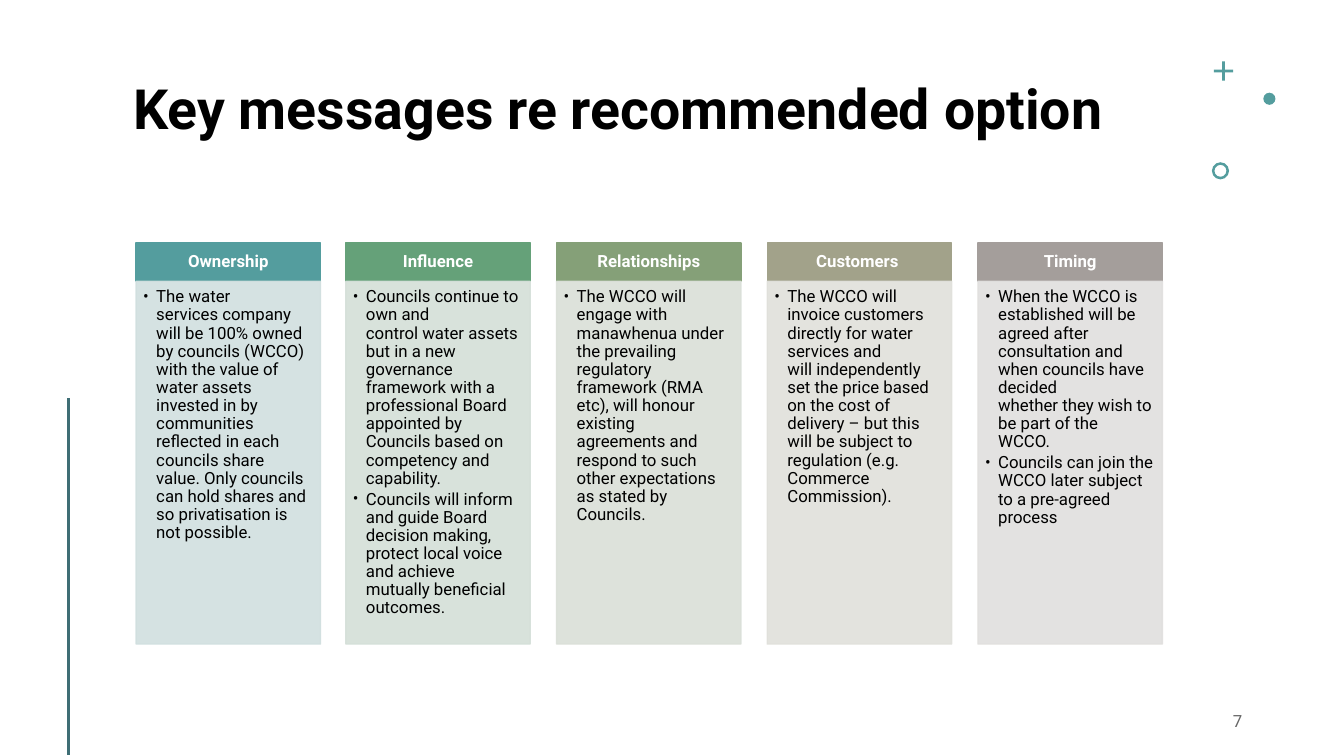
"""Build the slide of key messages about the recommended option."""
from lxml.etree import SubElement
from pptx import Presentation
from pptx.dml.color import RGBColor
from pptx.enum.shapes import MSO_CONNECTOR as Connector, MSO_SHAPE as Preset
from pptx.enum.text import MSO_ANCHOR as Anchor, MSO_AUTO_SIZE as AutoSize, PP_ALIGN as Align
from pptx.oxml.ns import qn
from pptx.util import Emu, Pt

PX = 9144
FONT = "Roboto"
TEAL = "549D9E"
DARK_TEAL = "3F6E75"
BLACK = "000000"
TIE = "~"
HARD_SPACE = chr(160)
COLUMNS = [
    ("Ownership", TEAL, "D1DFDF", [
        "The water services~company will be 100% owned by councils (WCCO) with the value of "
        "water assets invested in by communities reflected in each councils share value. "
        "Only councils can hold shares and so privatisation is not possible."]),
    ("Influence", "65A179", "D4DFD8", [
        "Councils continue to own and control~water assets but in a new governance framework "
        "with a professional Board appointed by Councils based on competency and capability.",
        "Councils will inform and guide Board decision making, protect local voice and "
        "achieve mutually beneficial outcomes."]),
    ("Relationships", "85A078", "DADFD8", [
        "The WCCO will engage with manawhenua under the prevailing regulatory framework "
        "(RMA etc), will honour existing agreements~and respond to such other expectations "
        "as stated by Councils."]),
    ("Customers ", "A2A28A", "E0E0DB", [
        "The WCCO will invoice customers directly for water services and will~independently "
        "set the price based on the cost of delivery – but this will be subject to "
        "regulation (e.g. Commerce Commission)."]),
    ("Timing", "A49E9B", "E0DFDE", [
        "When the WCCO is established will be agreed after consultation~and when councils "
        "have decided whether~they wish to be part of the WCCO.",
        "Councils can join the WCCO~later subject to a pre-agreed process"]),
]


def px(*lengths):
    """Turn whole pixels into a list of EMU lengths."""
    return [Emu(length * PX) for length in lengths]


def rgb(code):
    """Turn a hex string into a colour."""
    return RGBColor.from_string(code)


def fade(shape, percent):
    """Give every colour of a shape the same opacity."""
    for color in shape.element.iter(qn("a:srgbClr")):
        SubElement(color, qn("a:alpha")).set("val", str(percent * 1000))


def set_frame(box, anchor, insets):
    """Set wrapping, anchor and insets of a text frame and return it."""
    frame = box.text_frame
    frame.word_wrap = True
    frame.auto_size = AutoSize.NONE
    frame.vertical_anchor = anchor
    (frame.margin_left, frame.margin_top,
     frame.margin_right, frame.margin_bottom) = px(*insets)
    return frame


def add_span(para, text, size, color, bold=False):
    """Add one formatted run to a paragraph, with ties as hard spaces."""
    span = para.add_run()
    span.text = text.replace(TIE, HARD_SPACE)
    span.font.name = FONT
    span.font.size = Pt(size)
    span.font.bold = bold
    span.font.color.rgb = rgb(color)


def add_preset(page, preset, place, color, outlined=False):
    """Add a filled preset shape without shadow."""
    shape = page.shapes.add_shape(preset, *px(*place))
    shape.shadow.inherit = False
    shape.fill.solid()
    shape.fill.fore_color.rgb = rgb(color)
    if outlined:
        shape.line.color.rgb = rgb(color)
        shape.line.width = Pt(1)
    else:
        shape.line.fill.background()
    return shape


def add_bullet(para):
    """Give a paragraph a hanging bullet."""
    props = para._p.get_or_add_pPr()
    indent = px(13)[0]
    props.set("marL", str(indent))
    props.set("indent", str(-indent))
    SubElement(props, qn("a:buFont")).set("typeface", FONT)
    SubElement(props, qn("a:buChar")).set("char", "•")


def add_heading(page, left, text, color):
    """Add the coloured heading of a column."""
    box = add_preset(page, Preset.RECTANGLE, (left, 241, 183, 38), color, outlined=True)
    para = set_frame(box, Anchor.MIDDLE, (9, 5, 9, 5)).paragraphs[0]
    para.alignment = Align.CENTER
    para.line_spacing = 0.9
    add_span(para, text, 12, "FFFFFF", bold=True)


def add_messages(page, left, messages, color):
    """Add the pale panel of a column with its bullet list."""
    box = add_preset(page, Preset.RECTANGLE, (left, 279, 183, 360), color, outlined=True)
    fade(box, 90)
    frame = set_frame(box, Anchor.TOP, (7, 7, 9, 10))
    for index, message in enumerate(messages):
        para = frame.add_paragraph() if index else frame.paragraphs[0]
        para.level = 1
        para.alignment = Align.LEFT
        para.line_spacing = 0.9
        para.space_after = Pt(2)
        add_bullet(para)
        add_span(para, message, 12, BLACK)


def add_title(page, text):
    """Place and fill the title placeholder."""
    title = page.shapes.title
    title.left, title.top, title.width, title.height = px(122, 76, 1134, 137)
    para = set_frame(title, Anchor.TOP, (10, 5, 10, 5)).paragraphs[0]
    para.alignment = Align.LEFT
    para.line_spacing = 0.9
    add_span(para, text, 39.6, BLACK, bold=True)


def add_ornaments(page):
    """Add the plus, dot, ring and side line."""
    plus = add_preset(page, Preset.CROSS, (1204, 61, 19, 19), TEAL)
    plus.adjustments[0] = 0.43
    add_preset(page, Preset.OVAL, (1253, 92, 12, 12), TEAL)
    ring = add_preset(page, Preset.DONUT, (1202, 161, 17, 17), TEAL)
    ring.adjustments[0] = 0.15
    line = page.shapes.add_connector(Connector.STRAIGHT, *px(68, 395, 68, 749))
    line.line.color.rgb = rgb(DARK_TEAL)
    line.line.width = Pt(2)
    SubElement(line.element.spPr, qn("a:effectLst"))


def add_page_number(page, number):
    """Add the grey page number at the bottom right."""
    box = page.shapes.add_textbox(*px(942, 695, 300, 40))
    para = set_frame(box, Anchor.MIDDLE, (10, 5, 10, 5)).paragraphs[0]
    para.alignment = Align.RIGHT
    add_span(para, number, 12, BLACK)
    fade(box, 60)


def main():
    """Build and save the deck."""
    deck = Presentation()
    deck.slide_width, deck.slide_height = px(1333, 750)
    page = deck.slides.add_slide(deck.slide_layouts[5])
    add_title(page, "Key messages re recommended option")
    add_ornaments(page)
    add_page_number(page, "7")
    for index, (heading, strong, pale, messages) in enumerate(COLUMNS):
        left = 135 + 835 * index // 4
        add_heading(page, left, heading, strong)
        add_messages(page, left, messages, pale)
    deck.save("out.pptx")


if __name__ == "__main__":
    main()
